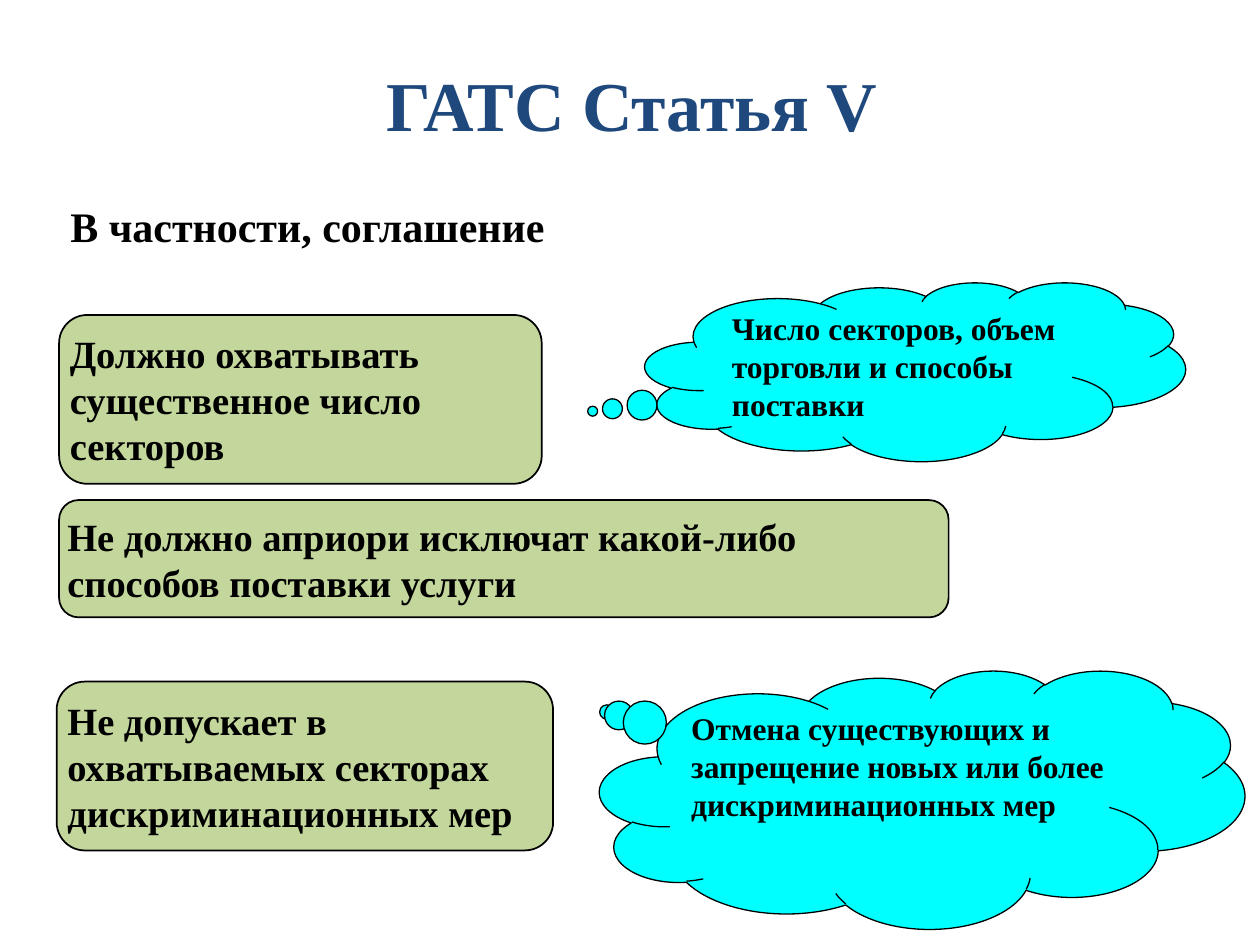
"""Build the slide on GATS Article V with rules and thought clouds."""
from lxml import etree
from pptx import Presentation
from pptx.dml.color import RGBColor as RGB
from pptx.enum.shapes import MSO_SHAPE as SHAPE
from pptx.enum.text import MSO_ANCHOR as ANCHOR, PP_ALIGN as ALIGN
from pptx.util import Pt

COLORS = {"title": "1F497D", "text": "000000", "line": "000000",
          "rule": "C3D69B", "cloud": "00FFFF"}
FONT = "Times New Roman"

RULES = [
    ("Должно охватывать существенное число секторов",
     (33.8, 180, 275.8, 96.5)),
    ("Не должно априори исключат какой-либо способов поставки услуги",
     (33.8, 285.8, 508.3, 67)),
    ("Не допускает в охватываемых секторах дискриминационных мер",
     (32.4, 389.5, 283.7, 96.5)),
]
CLOUDS = [
    ("Число секторов, объем торговли и способы поставки",
     (368.6, 161.3, 308.9, 102.2), (-0.597, 0.221), (7.2, 0, 0, 3.6)),
    ("Отмена существующих и запрещение новых или более дискриминационных мер",
     (342.7, 383, 368.6, 147.6), (-0.489, -0.338), (1.44, 0, 1.44, 3.6)),
]


def set_text(sp, text, size, color="text", align=ALIGN.LEFT, anchor=ANCHOR.TOP,
             insets=(7.2, 3.6, 7.2, 3.6), before=0):
    tf = sp.text_frame
    tf.word_wrap = True
    tf.vertical_anchor = anchor
    tf.margin_left, tf.margin_top, tf.margin_right, tf.margin_bottom = map(Pt, insets)
    p = tf.paragraphs[0]
    p.alignment = align
    p.space_before = Pt(before)
    r = p.add_run()
    r.text = text
    r.font.name, r.font.size, r.font.bold = FONT, Pt(size), True
    r.font.color.rgb = RGB.from_string(COLORS[color])


def add_title(s, text, box):
    sp = s.shapes.title
    sp.left, sp.top, sp.width, sp.height = map(Pt, box)
    set_text(sp, text, 40, color="title", align=ALIGN.CENTER, before=4)


def add_lead(s, text, box):
    sp = s.shapes.add_textbox(*map(Pt, box))
    set_text(sp, text, 24, before=3)


def add_panel(s, kind, box, fill, weight, adjustments):
    sp = s.shapes.add_shape(kind, *map(Pt, box))
    sp.shadow.inherit = False
    sp.fill.solid()
    sp.fill.fore_color.rgb = RGB.from_string(COLORS[fill])
    sp.line.color.rgb = RGB.from_string(COLORS["line"])
    sp.line.width = Pt(weight)
    for i, value in enumerate(adjustments):
        sp.adjustments[i] = value
    return sp


def add_rule(s, text, box):
    sp = add_panel(s, SHAPE.ROUNDED_RECTANGLE, box, "rule", 1, [0.167])
    set_text(sp, text, 22, anchor=ANCHOR.MIDDLE, insets=(1.44, 3.6, 1.44, 3.6))


def add_cloud(s, text, box, tail, insets):
    sp = add_panel(s, SHAPE.CLOUD_CALLOUT, box, "cloud", 0.75, tail)
    set_text(sp, text, 18, insets=insets)


def main():
    prs = Presentation()
    prs.slide_width, prs.slide_height = Pt(720), Pt(540)
    s = prs.slides.add_slide(prs.slide_layouts[5])
    add_title(s, "ГАТС Статья V", (64.8, 31.7, 592.6, 56.9))
    add_lead(s, "В частности, соглашение", (33.1, 110.9, 637.9, 36))
    for rule in RULES:
        add_rule(s, *rule)
    for cloud in CLOUDS:
        add_cloud(s, *cloud)
    prs.save("out.pptx")


if __name__ == "__main__":
    main()
